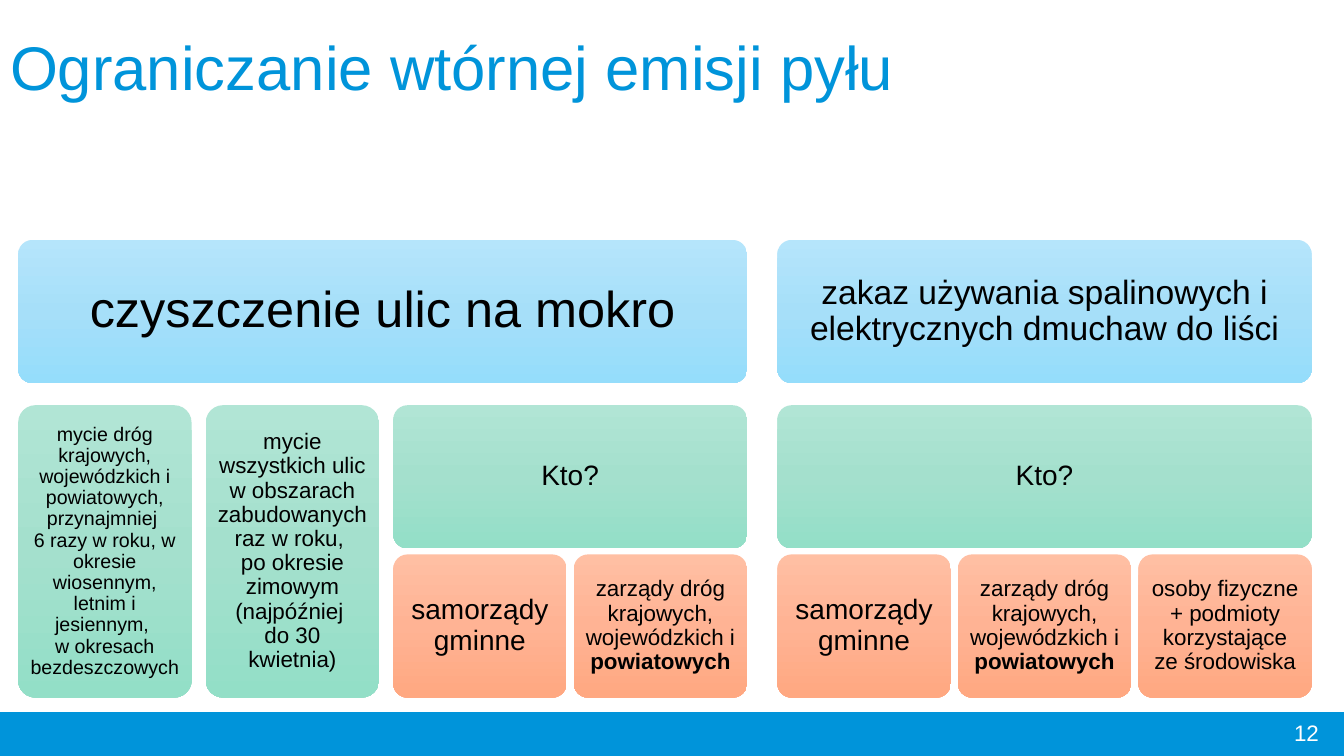
import copy
import pptx
import pptx.util
import pptx.dml.color
import pptx.enum.shapes
import pptx.enum.text

Inches = pptx.util.Inches
ALIGN = pptx.enum.text.PP_ALIGN
MIDDLE = pptx.enum.text.MSO_ANCHOR.MIDDLE
SHAPE = pptx.enum.shapes.MSO_SHAPE

WIDTH, HEIGHT = 13.33, 7.5
BAR_TOP = 7.07
CARD_WIDTH, CARD_HEIGHT = 1.72, 1.42
COLUMNS = [0.18 + 1.86 * i for i in range(3)] + [5.69] + [7.71 + 1.79 * i for i in range(3)]
ROWS = [2.38, 4.02, 5.5]

COLORS = {"brand": "0094DA", "text": "000000", "light": "FFFFFF"}
GRADIENTS = {
    "topic": ["B5E5FB", "A6DFF9", "95DDFB"],
    "task": ["B1E5D5", "A4E0CD", "93DFC7"],
    "actor": ["FFBFA3", "FFB394", "FFA881"],
}

MUNICIPALITIES = ["samorządy gminne"]
ROAD_BOARDS = ["zarządy dróg krajowych, wojewódzkich i ", "powiatowych"]
CARDS = [
    ("topic", (0, 3), (0, 0), 36, 0.15, ["czyszczenie ulic na mokro"]),
    ("task", (0, 0), (1, 2), 14, 0.06, [
        "mycie dróg krajowych, wojewódzkich i powiatowych, przynajmniej \n"
        "6 razy w roku, w okresie wiosennym, letnim i jesiennym, \n"
        "w okresach bezdeszczowych "]),
    ("task", (1, 1), (1, 2), 16, 0.07, [
        "mycie wszystkich ulic w obszarach zabudowanych raz w roku, \n"
        "po okresie zimowym (najpóźniej \ndo 30 kwietnia)"]),
    ("task", (2, 3), (1, 1), 20, 0.08, ["Kto?"]),
    ("actor", (2, 2), (2, 2), 20, 0.08, MUNICIPALITIES),
    ("actor", (3, 3), (2, 2), 16, 0.07, ROAD_BOARDS),
    ("topic", (4, 6), (0, 0), 24, 0.1, ["zakaz używania spalinowych i elektrycznych dmuchaw do liści"]),
    ("task", (4, 6), (1, 1), 20, 0.08, ["Kto?"]),
    ("actor", (4, 4), (2, 2), 20, 0.08, MUNICIPALITIES),
    ("actor", (5, 5), (2, 2), 16, 0.07, ROAD_BOARDS),
    ("actor", (6, 6), (2, 2), 16, 0.07, ["osoby fizyczne + podmioty korzystające ze środowiska"]),
]


def rgb(value):
    return pptx.dml.color.RGBColor.from_string(value)


def write(box, parts, size, color="text", align=ALIGN.CENTER, inset=None, spacing=0.9):
    frame = box.text_frame
    frame.word_wrap = True
    frame.auto_size = pptx.enum.text.MSO_AUTO_SIZE.NONE
    frame.vertical_anchor = MIDDLE
    if inset is not None:
        frame.margin_left = frame.margin_right = Inches(inset)
        frame.margin_top = frame.margin_bottom = Inches(inset)
    para = frame.paragraphs[0]
    para.alignment = align
    para.line_spacing = spacing
    for index, part in enumerate(parts):
        for number, line in enumerate(part.split("\n")):
            if number:
                para.add_line_break()
            span = para.add_run()
            span.text = line
            span.font.name = "Arial"
            span.font.size = pptx.util.Pt(size)
            span.font.bold = index > 0
            span.font.color.rgb = rgb(COLORS[color])


def fill_gradient(box, colors):
    box.fill.gradient()
    box.fill.gradient_angle = 270
    first = box.fill.gradient_stops[0]
    first.color.rgb = rgb(colors[0])
    stop_list = box.fill._fill._gradFill.gsLst
    stop_list.insert(1, copy.deepcopy(stop_list[0]))
    for index, (stop, color) in enumerate(zip(box.fill.gradient_stops, colors)):
        stop.position = index / 2
        stop.color.rgb = rgb(color)


def add_card(page, kind, columns, rows, size, inset, parts):
    left, top = COLUMNS[columns[0]], ROWS[rows[0]]
    width = COLUMNS[columns[1]] + CARD_WIDTH - left
    height = ROWS[rows[1]] + CARD_HEIGHT - top
    card = page.shapes.add_shape(
        SHAPE.ROUNDED_RECTANGLE, Inches(left), Inches(top), Inches(width), Inches(height))
    card.adjustments[0] = 0.1
    card.shadow.inherit = False
    card.line.fill.background()
    fill_gradient(card, GRADIENTS[kind])
    write(card, parts, size, inset=inset)


def add_title(page, text):
    title = page.shapes.title
    title.left, title.top = Inches(0), Inches(0.28)
    title.width, title.height = Inches(10.3), Inches(0.85)
    write(title, [text], 44, color="brand", align=ALIGN.LEFT)


def add_footer(page, number):
    bar = page.shapes.add_shape(
        SHAPE.RECTANGLE, 0, Inches(BAR_TOP), Inches(WIDTH), Inches(HEIGHT - BAR_TOP))
    bar.shadow.inherit = False
    bar.fill.solid()
    bar.fill.fore_color.rgb = rgb(COLORS["brand"])
    bar.line.color.rgb = rgb(COLORS["brand"])
    bar.line.width = pptx.util.Pt(1)
    box = page.shapes.add_textbox(Inches(10.18), Inches(BAR_TOP), Inches(3), Inches(0.4))
    write(box, [number], 16, color="light", align=ALIGN.RIGHT, spacing=1.0)


def main():
    deck = pptx.Presentation()
    deck.slide_width, deck.slide_height = Inches(WIDTH), Inches(HEIGHT)
    page = deck.slides.add_slide(deck.slide_layouts[5])
    add_title(page, "Ograniczanie wtórnej emisji pyłu")
    add_footer(page, "12")
    for card in CARDS:
        add_card(page, *card)
    deck.save("out.pptx")


if __name__ == "__main__":
    main()
